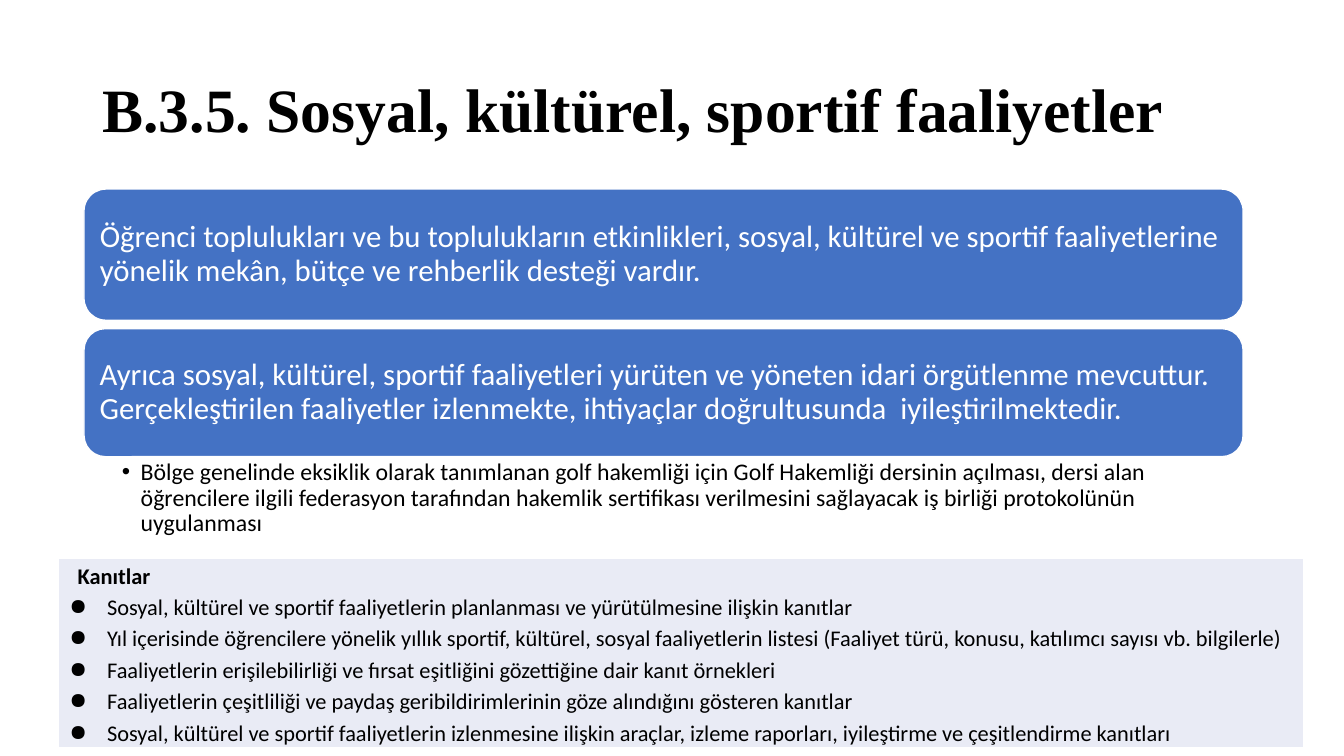
"""Build the slide on social, cultural and sports activities."""
from lxml.etree import SubElement
from pptx import Presentation
from pptx.dml.color import RGBColor
from pptx.enum.shapes import MSO_SHAPE as Shape
from pptx.enum.text import MSO_ANCHOR as Anchor, MSO_AUTO_SIZE as AutoSize, PP_ALIGN as Align
from pptx.oxml.ns import qn
from pptx.util import Pt

PX = 9525
BLACK = RGBColor(0x00, 0x00, 0x00)
WHITE = RGBColor(0xFF, 0xFF, 0xFF)
BLUE = RGBColor(0x44, 0x72, 0xC4)
PALE = RGBColor(0xE9, 0xEB, 0xF5)

TITLE = "B.3.5. Sosyal, kültürel, sportif faaliyetler"
CARDS = [
    (180, 125, "Öğrenci toplulukları ve bu toplulukların etkinlikleri, sosyal, kültürel ve sportif "
               "faaliyetlerine yönelik mekân, bütçe ve rehberlik desteği vardır."),
    (313, 122, "Ayrıca sosyal, kültürel, sportif faaliyetleri yürüten ve yöneten idari örgütlenme "
               "mevcuttur. Gerçekleştirilen faaliyetler izlenmekte, ihtiyaçlar doğrultusunda  "
               "iyileştirilmektedir."),
]
GOLF = ("Bölge genelinde eksiklik olarak tanımlanan golf hakemliği için Golf Hakemliği dersinin "
        "açılması, dersi alan öğrencilere ilgili federasyon tarafından hakemlik sertifikası "
        "verilmesini sağlayacak iş birliği protokolünün uygulanması")
EVIDENCE = [
    "Sosyal, kültürel ve sportif faaliyetlerin planlanması ve yürütülmesine ilişkin kanıtlar",
    "Yıl içerisinde öğrencilere yönelik yıllık sportif, kültürel, sosyal faaliyetlerin listesi "
    "(Faaliyet türü, konusu, katılımcı sayısı vb. bilgilerle)",
    "Faaliyetlerin erişilebilirliği ve fırsat eşitliğini gözettiğine dair kanıt örnekleri",
    "Faaliyetlerin çeşitliliği ve paydaş geribildirimlerinin göze alındığını gösteren kanıtlar",
    "Sosyal, kültürel ve sportif faaliyetlerin izlenmesine ilişkin araçlar, izleme raporları, "
    "iyileştirme ve çeşitlendirme kanıtları",
]


def px(*lengths):
    return [length * PX for length in lengths]


def place(element, *box):
    element.left, element.top, element.width, element.height = px(*box)


def set_margins(holder, *margins):
    (holder.margin_left, holder.margin_top,
     holder.margin_right, holder.margin_bottom) = px(*margins)


def write(paragraph, text, size, color=BLACK, font="Calibri", bold=False,
          align=Align.LEFT, spacing=0.9):
    paragraph.alignment = align
    paragraph.line_spacing = spacing
    paragraph.space_before = paragraph.space_after = Pt(0)
    run = paragraph.add_run()
    run.text = text
    run.font.size = Pt(size)
    run.font.name = font
    run.font.bold = bold
    run.font.color.rgb = color


def indent(paragraph, left, hanging=0, bullet=None):
    properties = paragraph._p.get_or_add_pPr()
    properties.set("marL", str(left * PX))
    properties.set("indent", str(-hanging * PX))
    if bullet:
        SubElement(properties, qn("a:buChar")).set("char", bullet)


def fill_title(title):
    place(title, 88, 38, 1104, 139)
    frame = title.text_frame
    frame.auto_size = AutoSize.NONE
    frame.vertical_anchor = Anchor.MIDDLE
    write(frame.paragraphs[0], TITLE, 44, font="Times New Roman", bold=True)


def add_card(slide, top, height, text):
    card = slide.shapes.add_shape(Shape.ROUNDED_RECTANGLE, *px(80, top, 1104, height))
    card.shadow.inherit = False
    card.fill.solid()
    card.fill.fore_color.rgb = BLUE
    card.line.color.rgb = WHITE
    card.line.width = Pt(1)
    frame = card.text_frame
    frame.word_wrap = True
    frame.vertical_anchor = Anchor.MIDDLE
    set_margins(frame, 9, 9, 9, 9)
    write(frame.paragraphs[0], text, 22, WHITE)


def fill_golf_note(body):
    place(body, 80, 435, 1104, 100)
    frame = body.text_frame
    frame.auto_size = AutoSize.NONE
    frame.vertical_anchor = Anchor.TOP
    set_margins(frame, 36, 3, 16, 3)
    note = frame.paragraphs[0]
    note.level = 1
    write(note, GOLF, 17)
    indent(note, 18, 18, "•")


def add_borders(cell):
    properties = cell._tc.get_or_add_tcPr()
    for position, side in enumerate(("a:lnL", "a:lnR", "a:lnT", "a:lnB")):
        border = properties.makeelement(qn(side), {"w": str(Pt(1))})
        fill = SubElement(border, qn("a:solidFill"))
        SubElement(fill, qn("a:srgbClr")).set("val", str(WHITE))
        properties.insert(position, border)


def add_evidence(slide):
    table = slide.shapes.add_table(1, 1, *px(56, 532, 1186, 175)).table
    table.first_row = table.horz_banding = False
    cell = table.cell(0, 0)
    cell.fill.solid()
    cell.fill.fore_color.rgb = PALE
    add_borders(cell)
    set_margins(cell, 10, 0, 10, 0)
    frame = cell.text_frame
    heading = frame.paragraphs[0]
    write(heading, "Kanıtlar", 16, bold=True, align=Align.JUSTIFY, spacing=1.15)
    indent(heading, 8)
    for text in EVIDENCE:
        item = frame.add_paragraph()
        write(item, text, 16, align=Align.JUSTIFY, spacing=1.15)
        indent(item, 36, 36, "●")


def main():
    deck = Presentation()
    deck.slide_width, deck.slide_height = px(1280, 720)
    slide = deck.slides.add_slide(deck.slide_layouts[1])
    fill_title(slide.shapes.title)
    for top, height, text in CARDS:
        add_card(slide, top, height, text)
    fill_golf_note(slide.placeholders[1])
    add_evidence(slide)
    deck.save("out.pptx")


if __name__ == "__main__":
    main()
